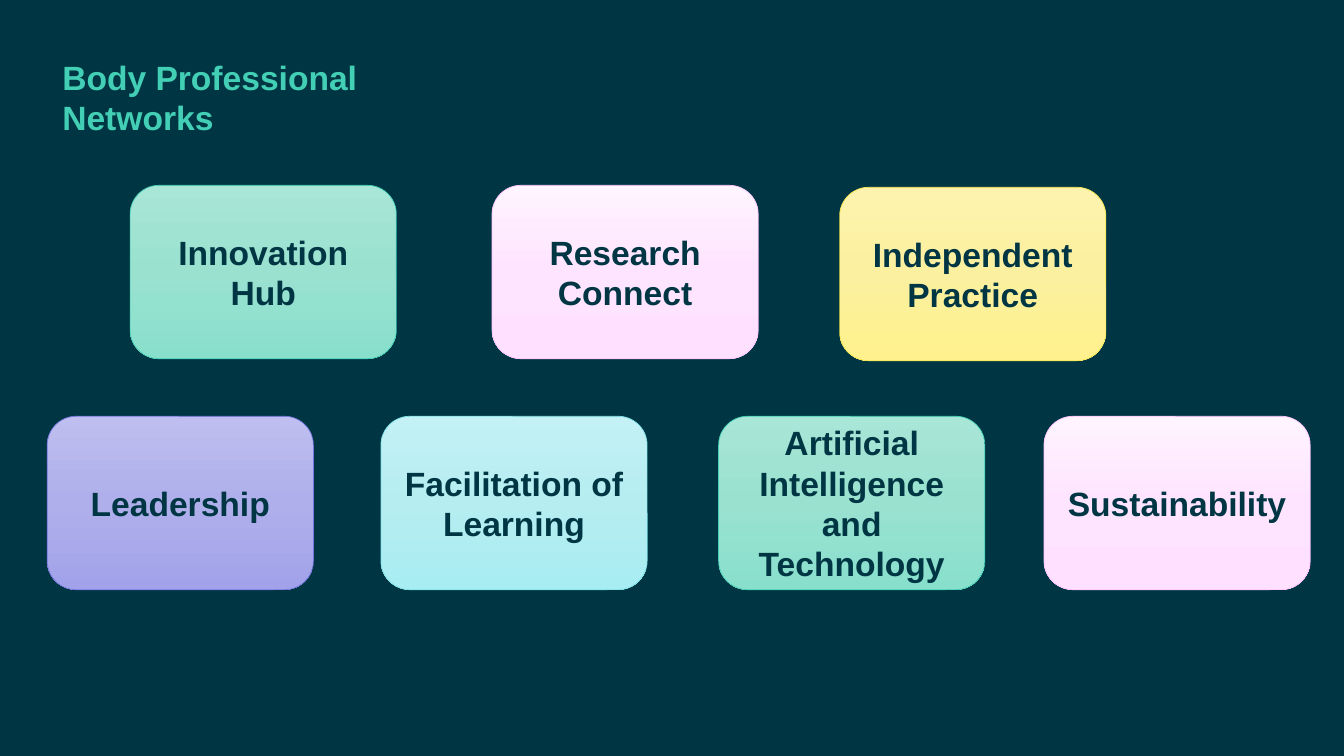
"""Build the slide of professional networks as a title and seven gradient cards."""

import copy
from dataclasses import dataclass

import pptx
import pptx.dml.color
import pptx.enum.shapes
import pptx.enum.text
import pptx.util

Cm = pptx.util.Cm

COLOURS = {"background": "003643", "title": "43CFB5", "card text": "003643"}
PALETTES = {
    "green": ("A8E6D7", "9AE1D0", "88E0CC", "43CFB5"),
    "pink": ("FFF4FF", "FFE4FF", "FFE0FF", "FFC2FF"),
    "yellow": ("FDF3AE", "FBF09F", "FFF18D", "F7E64D"),
    "purple": ("BEBEF0", "AFAFEB", "A2A2EB", "7575DF"),
    "cyan": ("C3F1F5", "B5EDF1", "A8EDF2", "7EE1E8"),
}
CARD_WIDTH, CARD_HEIGHT = 6.71, 4.37
UPPER_ROW, LOWER_ROW = 4.67, 10.49


@dataclass(frozen=True)
class NetworkCard:
    name: str
    left: float
    top: float
    palette: str


CARDS = (
    NetworkCard("Innovation Hub", 3.28, UPPER_ROW, "green"),
    NetworkCard("Research Connect", 12.4, UPPER_ROW, "pink"),
    NetworkCard("Independent Practice", 21.16, UPPER_ROW + 0.05, "yellow"),
    NetworkCard("Leadership", 1.19, LOWER_ROW, "purple"),
    NetworkCard("Facilitation of Learning", 9.6, LOWER_ROW, "cyan"),
    NetworkCard("Artificial Intelligence and Technology", 18.11, LOWER_ROW, "green"),
    NetworkCard("Sustainability", 26.31, LOWER_ROW, "pink"),
)


def rgb(value: str) -> pptx.dml.color.RGBColor:
    return pptx.dml.color.RGBColor.from_string(value)


def add_bold_run(paragraph, text: str, colour: str) -> None:
    run = paragraph.add_run()
    run.text = text
    run.font.name = "Arial"
    run.font.size = pptx.util.Pt(24)
    run.font.bold = True
    run.font.color.rgb = rgb(colour)


def fill_gradient(shape, colours: tuple[str, ...]) -> None:
    fill = shape.fill
    fill.gradient()
    fill.gradient_angle = 270
    stop_list = fill.gradient_stops[0]._gs.getparent()
    stop_list.insert(1, copy.deepcopy(stop_list[0]))
    for index, (stop, colour) in enumerate(zip(fill.gradient_stops, colours)):
        stop.position = index / 2
        stop.color.rgb = rgb(colour)


def add_title(slide, lines: tuple[str, ...]) -> None:
    box = slide.shapes.add_textbox(Cm(1.32), Cm(1.3), Cm(8.38), Cm(3.2))
    frame = box.text_frame
    frame.word_wrap = True
    for index, line in enumerate(lines):
        paragraph = frame.add_paragraph() if index else frame.paragraphs[0]
        add_bold_run(paragraph, line, COLOURS["title"])


def add_card(slide, card: NetworkCard) -> None:
    shape = slide.shapes.add_shape(
        pptx.enum.shapes.MSO_SHAPE.FLOWCHART_ALTERNATE_PROCESS,
        Cm(card.left), Cm(card.top), Cm(CARD_WIDTH), Cm(CARD_HEIGHT),
    )
    shape.shadow.inherit = False
    *stops, outline = PALETTES[card.palette]
    fill_gradient(shape, tuple(stops))
    shape.line.color.rgb = rgb(outline)
    shape.line.width = pptx.util.Pt(0.5)
    frame = shape.text_frame
    frame.word_wrap = True
    frame.vertical_anchor = pptx.enum.text.MSO_ANCHOR.MIDDLE
    paragraph = frame.paragraphs[0]
    paragraph.alignment = pptx.enum.text.PP_ALIGN.CENTER
    add_bold_run(paragraph, card.name, COLOURS["card text"])


def main() -> None:
    presentation = pptx.Presentation()
    presentation.slide_width = Cm(33.87)
    presentation.slide_height = Cm(19.05)
    slide = presentation.slides.add_slide(presentation.slide_layouts[6])
    slide.background.fill.solid()
    slide.background.fill.fore_color.rgb = rgb(COLOURS["background"])
    add_title(slide, ("Body Professional", "Networks"))
    for card in CARDS:
        add_card(slide, card)
    presentation.save("out.pptx")


if __name__ == "__main__":
    main()
